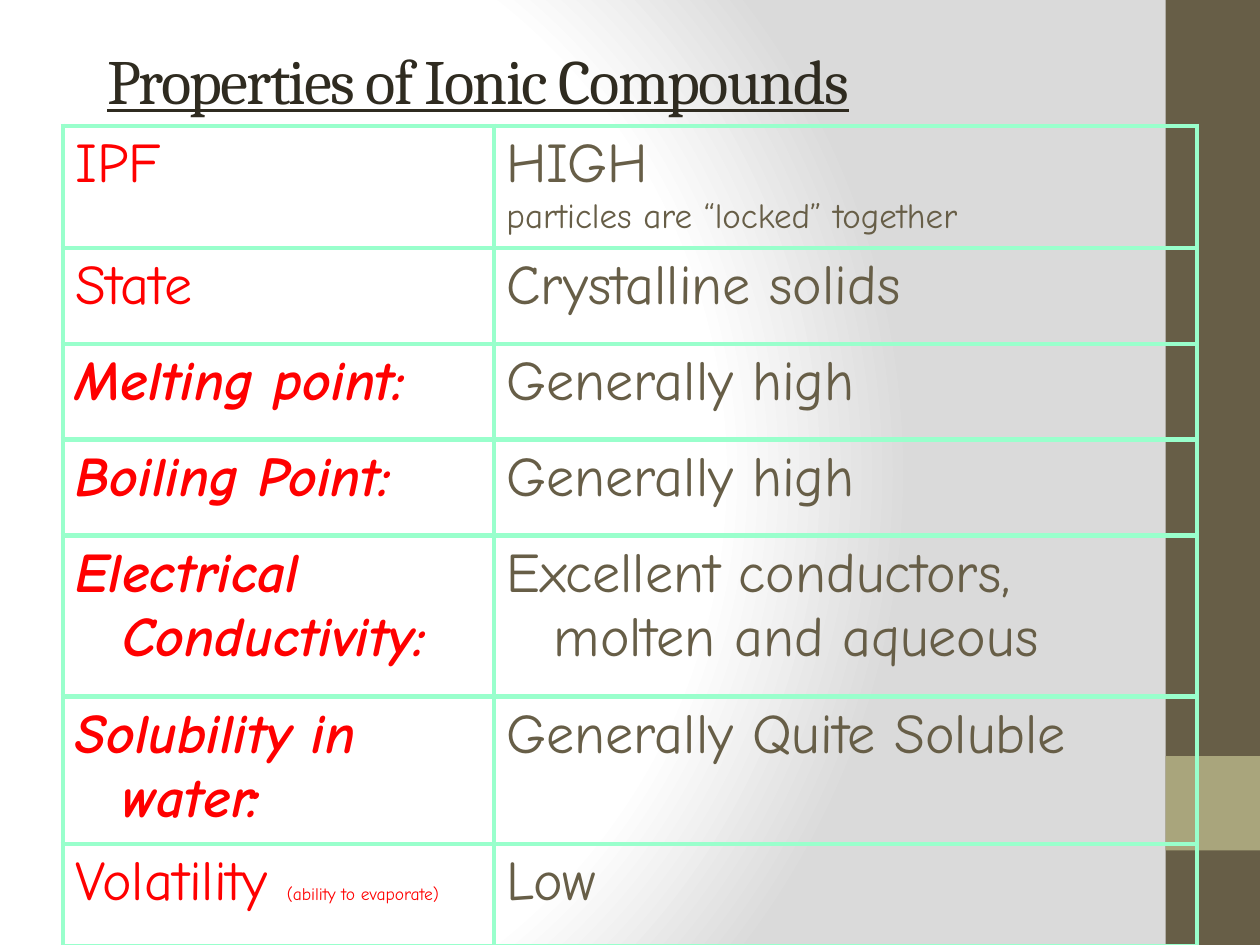
import pptx
import pptx.dml.color
import pptx.enum.shapes
import pptx.enum.text
import pptx.oxml
import pptx.oxml.ns
import pptx.util
from pptx.dml.color import RGBColor
from pptx.util import Pt

BROWN = RGBColor(0x67, 0x5E, 0x47)
OLIVE = RGBColor(0xA9, 0xA5, 0x7C)
DARK = RGBColor(0x2F, 0x2B, 0x20)
RED = RGBColor(0xFF, 0x00, 0x00)
MINT = RGBColor(0x99, 0xFF, 0xCC)
WHITE = RGBColor(0xFF, 0xFF, 0xFF)
GREY = RGBColor(0xDA, 0xDA, 0xDA)

TITLE_FONT = "Cambria"
BODY_FONT = "Comic Neue"
COLUMN_WIDTHS = [246.24, 401.76]
ROW_HEIGHTS = [69.84, 54.72, 54.72, 54.72, 92.16, 84.24, 58.32]
HANGING_INDENT = 27

# Each row: label runs, label in bold italics, value paragraphs; text goes with its size
ROWS = [
    ([("IPF", 32)], False, [("HIGH", 32), ("particles are “locked” together", 20)]),
    ([("State", 32)], False, [("Crystalline solids", 32)]),
    ([("Melting point:", 32)], True, [("Generally high", 32)]),
    ([("Boiling Point:", 32)], True, [("Generally high", 32)]),
    ([("Electrical Conductivity:", 32)], True,
     [("Excellent conductors, molten and aqueous", 32)]),
    ([("Solubility in water:", 32)], True, [("Generally Quite Soluble", 32)]),
    ([("Volatility ", 32), ("(ability to evaporate)", 10)], False, [("Low", 32)]),
]


def add_run(paragraph, text, *, size, color, font=BODY_FONT, bold=False,
            italic=False, underline=False):
    run = paragraph.add_run()
    run.text = text
    run.font.name = font
    run.font.size = Pt(size)
    run.font.color.rgb = color
    run.font.bold = bold
    run.font.italic = italic
    run.font.underline = underline
    return run


def set_background(slide):
    """Radial gradient, white until three quarters of the way, then grey."""
    slide.background.fill.solid()
    properties = slide.element.find(".//" + pptx.oxml.ns.qn("p:bgPr"))
    stops = "".join(
        f'<a:gs pos="{position}"><a:srgbClr val="{color}"/></a:gs>'
        for position, color in [(0, WHITE), (75000, WHITE), (100000, GREY)])
    gradient = pptx.oxml.parse_xml(
        f'<a:gradFill {pptx.oxml.ns.nsdecls("a")} rotWithShape="1">'
        f'<a:gsLst>{stops}</a:gsLst><a:path path="circle">'
        '<a:fillToRect l="20000" t="50000" r="100000" b="50000"/>'
        '</a:path></a:gradFill>')
    properties.replace(properties[0], gradient)


def add_bar(slide, top, height, color):
    shape = slide.shapes.add_shape(
        pptx.enum.shapes.MSO_SHAPE.RECTANGLE, Pt(666), Pt(top), Pt(54), Pt(height))
    shape.shadow.inherit = False
    shape.fill.solid()
    shape.fill.fore_color.rgb = color
    shape.line.fill.background()


def format_title(slide, text):
    title = slide.shapes.title
    title.left, title.top, title.width, title.height = Pt(54), Pt(12.24), Pt(612), Pt(66.24)
    title.text_frame.vertical_anchor = pptx.enum.text.MSO_ANCHOR.MIDDLE
    paragraph = title.text_frame.paragraphs[0]
    paragraph.alignment = pptx.enum.text.PP_ALIGN.LEFT
    run = add_run(paragraph, text, size=36, color=DARK, font=TITLE_FONT, underline=True)
    run.font._element.set("spc", "-100")


def format_cell(cell):
    """Clear fill and a mint border on all four sides."""
    cell.margin_left = cell.margin_right = Pt(7.2)
    cell.margin_top = cell.margin_bottom = Pt(3.6)
    properties = cell._tc.get_or_add_tcPr()
    for side in ("lnL", "lnR", "lnT", "lnB"):
        properties.append(pptx.oxml.parse_xml(
            f'<a:{side} {pptx.oxml.ns.nsdecls("a")} w="{Pt(3)}"><a:solidFill>'
            f'<a:srgbClr val="{MINT}"/></a:solidFill></a:{side}>'))
    cell.fill.background()


def fill_cell(cell, paragraphs, **text_format):
    """Write a list of paragraphs, each a list of (text, size) runs."""
    format_cell(cell)
    for index, runs in enumerate(paragraphs):
        frame = cell.text_frame
        paragraph = frame.add_paragraph() if index else frame.paragraphs[0]
        indents = paragraph._p.get_or_add_pPr()
        indents.set("marL", str(Pt(HANGING_INDENT)))
        indents.set("indent", str(-Pt(HANGING_INDENT)))
        for text, size in runs:
            add_run(paragraph, text, size=size, **text_format)


def add_property_table(slide):
    table = slide.shapes.add_table(
        len(ROWS), len(COLUMN_WIDTHS), Pt(36), Pt(72),
        Pt(sum(COLUMN_WIDTHS)), Pt(sum(ROW_HEIGHTS))).table
    table.first_row = table.horz_banding = False
    for column, width in zip(table.columns, COLUMN_WIDTHS):
        column.width = Pt(width)
    for index, (label, emphasis, values) in enumerate(ROWS):
        table.rows[index].height = Pt(ROW_HEIGHTS[index])
        fill_cell(table.cell(index, 0), [label], color=RED, bold=emphasis, italic=emphasis)
        fill_cell(table.cell(index, 1), [[value] for value in values], color=BROWN)


def main():
    presentation = pptx.Presentation()
    presentation.slide_width, presentation.slide_height = Pt(720), Pt(540)
    slide = presentation.slides.add_slide(presentation.slide_layouts[5])

    # Background and side bars
    set_background(slide)
    add_bar(slide, 0, 540, BROWN)
    add_bar(slide, 432, 54, OLIVE)

    # Title and table
    format_title(slide, "Properties of Ionic Compounds")
    add_property_table(slide)
    presentation.save("out.pptx")


if __name__ == "__main__":
    main()
